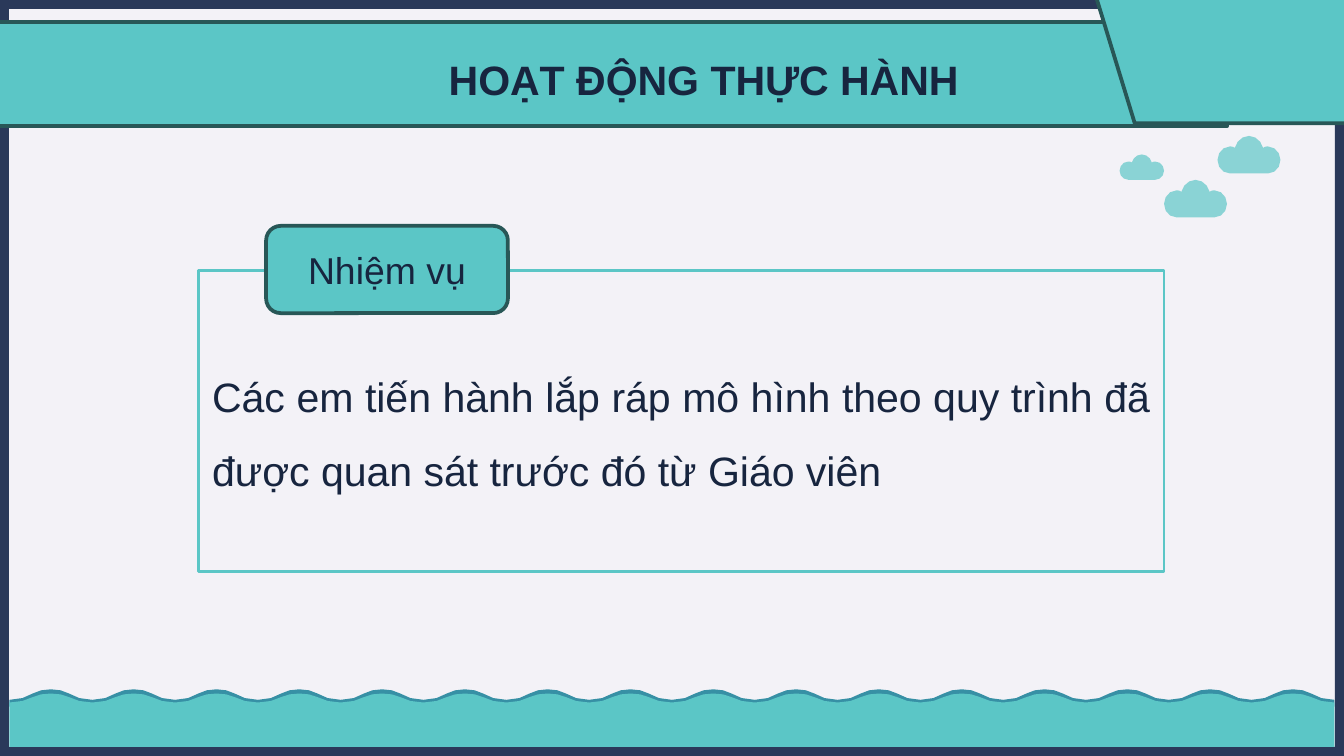
from lxml import etree
from pptx import Presentation
from pptx.dml.color import RGBColor
from pptx.enum.shapes import MSO_SHAPE
from pptx.enum.text import MSO_ANCHOR, MSO_AUTO_SIZE, PP_ALIGN
from pptx.oxml.ns import qn
from pptx.util import Cm, Pt

FRAME, RECTANGLE = MSO_SHAPE.FRAME, MSO_SHAPE.RECTANGLE
ROUNDED, PENTAGON = MSO_SHAPE.ROUNDED_RECTANGLE, MSO_SHAPE.REGULAR_PENTAGON
MIDDLE, NO_AUTOFIT = MSO_ANCHOR.MIDDLE, MSO_AUTO_SIZE.NONE
LEFT, CENTER, JUSTIFY = PP_ALIGN.LEFT, PP_ALIGN.CENTER, PP_ALIGN.JUSTIFY

TITLE = "HOẠT ĐỘNG THỰC HÀNH"
TASK_LABEL = "Nhiệm vụ"
TASK = "Các em tiến hành lắp ráp mô hình theo quy trình đã được quan sát trước đó từ Giáo viên"

THEME = {
    "font": "Arial", "large": 22, "medium": 20,
    "ink": "17253F", "paper": "F3F2F7", "frame": "2A395A",
    "teal": "5BC6C6", "outline": "285757", "wave": "3790A5",
}

# Boxes are left, top, width, height in centimetres.
SLIDE_SIZE = (25.4, 14.29)
TITLE_BOX = (8.23, 0.69, 21.41, 1.6)
TASK_BOX = (3.76, 5.11, 18.24, 5.69)
LABEL_BOX = (5.03, 4.27, 4.57, 1.65)
BAND_BOX = (-1.19, 0.41, 24.38, 1.98)
CORNER_BOX = (20.19, -4.32, 6.58, 6.65)
CLOUDS = [(21.16, 2.92, 0.84, 0.48), (23.01, 2.57, 1.19, 0.71), (22, 3.4, 1.19, 0.71)]
CLOUD_OPACITY = 69
SEA_LEFT, SEA_WIDTH, WAVE_COUNT = 0.18, 25.04, 16
WAVES = [  # crest, depth, bottom, colour
    (13.03, 0.2, 13.36, "wave"),
    (13.11, 0.17, 14.12, "teal"),
]

# Left halves of symmetric outlines: a start, then cubic curves; the axis is at x = 1.
HALF_WAVE = [(0, 1),
             [(0.23, 1), (0.42, 0.75), (0.56, 0.4)],
             [(0.68, 0.13), (0.84, 0), (1, 0)]]
HALF_CLOUD = [(1, 0),
              [(0.79, 0), (0.6, 0.14), (0.55, 0.32)],
              [(0.51, 0.29), (0.45, 0.28), (0.4, 0.28)],
              [(0.17, 0.28), (0, 0.45), (0, 0.64)],
              [(0, 0.84), (0.17, 1), (0.4, 1)]]
WAVE_STEPS, CLOUD_STEPS = 2, 3


def colour(name):
    return RGBColor.from_string(THEME[name])


def symmetric_outline(half, steps):
    """Sample the curves of a half outline and add its mirror image, each point once."""
    points = [half[0]]
    for curve in half[1:]:
        controls = [points[-1], *curve]
        for step in range(1, steps + 1):
            t = step / steps
            weights = ((1 - t) ** 3, 3 * t * (1 - t) ** 2, 3 * t * t * (1 - t), t ** 3)
            points.append(tuple(sum(weight * control[axis] for weight, control in zip(weights, controls))
                                for axis in (0, 1)))
    return list(dict.fromkeys(points + [(2 - x, y) for x, y in reversed(points)]))


def style(shape, fill=None, line=None, width=2):
    shape.shadow.inherit = False
    if fill:
        shape.fill.solid()
        shape.fill.fore_color.rgb = colour(fill)
    else:
        shape.fill.background()
    if line:
        shape.line.color.rgb = colour(line)
        shape.line.width = Pt(width)
    else:
        shape.line.fill.background()
    return shape


def add_box(slide, kind, box, **look):
    return style(slide.shapes.add_shape(kind, *map(Cm, box)), **look)


def add_outline(slide, points, fill):
    corners = [(Cm(x), Cm(y)) for x, y in points]
    builder = slide.shapes.build_freeform(*corners[0])
    builder.add_line_segments(corners[1:], close=True)
    return style(builder.convert_to_shape(), fill=fill)


def write(shape, text, size="large", bold=False, align=LEFT, spacing=1.0):
    frame = shape.text_frame
    frame.word_wrap = True
    frame.auto_size = NO_AUTOFIT
    frame.vertical_anchor = MIDDLE
    frame.margin_left = frame.margin_right = Cm(0.25)
    frame.margin_top = frame.margin_bottom = Cm(0.25)
    paragraph = frame.paragraphs[0]
    paragraph.alignment = align
    paragraph.line_spacing = spacing
    run = paragraph.add_run()
    run.text = text
    run.font.name = THEME["font"]
    run.font.size = Pt(THEME[size])
    run.font.bold = bold
    run.font.color.rgb = colour("ink")


def add_sea(slide):
    period = SEA_WIDTH / WAVE_COUNT
    sea_right = SEA_LEFT + SEA_WIDTH
    ripple = symmetric_outline(HALF_WAVE, WAVE_STEPS)[:-1]  # the next ripple starts at the last point
    for crest, depth, bottom, fill in WAVES:
        surface = [(SEA_LEFT + (index + x / 2) * period, crest + y * depth)
                   for index in range(WAVE_COUNT) for x, y in ripple]
        edge = [(sea_right, crest + depth), (sea_right, bottom), (SEA_LEFT, bottom)]
        add_outline(slide, surface + edge, fill)


def add_clouds(slide):
    outline = symmetric_outline(HALF_CLOUD, CLOUD_STEPS)
    for left, top, width, height in CLOUDS:
        cloud = add_outline(slide, [(left + x * width / 2, top + y * height) for x, y in outline], "teal")
        fill_colour = cloud._element.spPr.find(qn("a:solidFill"))[0]
        etree.SubElement(fill_colour, qn("a:alpha"), val=str(CLOUD_OPACITY * 1000))


def main():
    presentation = Presentation()
    presentation.slide_width, presentation.slide_height = map(Cm, SLIDE_SIZE)
    slide = presentation.slides.add_slide(presentation.slide_layouts[5])
    slide.background.fill.solid()
    slide.background.fill.fore_color.rgb = colour("paper")

    border = add_box(slide, FRAME, (0, 0, *SLIDE_SIZE), fill="frame")
    border.adjustments[0] = 0.012
    add_sea(slide)
    add_clouds(slide)

    task = add_box(slide, RECTANGLE, TASK_BOX, line="teal", width=1.5)
    write(task, TASK, align=JUSTIFY, spacing=1.5)
    label = add_box(slide, ROUNDED, LABEL_BOX, fill="teal", line="outline")
    write(label, TASK_LABEL, size="medium", align=CENTER)
    add_box(slide, RECTANGLE, BAND_BOX, fill="teal", line="outline")
    add_box(slide, PENTAGON, CORNER_BOX, fill="teal", line="outline")

    title = slide.shapes.title
    title.left, title.top, title.width, title.height = map(Cm, TITLE_BOX)
    write(title, TITLE, bold=True)
    slide.shapes._spTree.append(title._element)  # bring the title in front of the band

    presentation.save("out.pptx")


if __name__ == "__main__":
    main()
